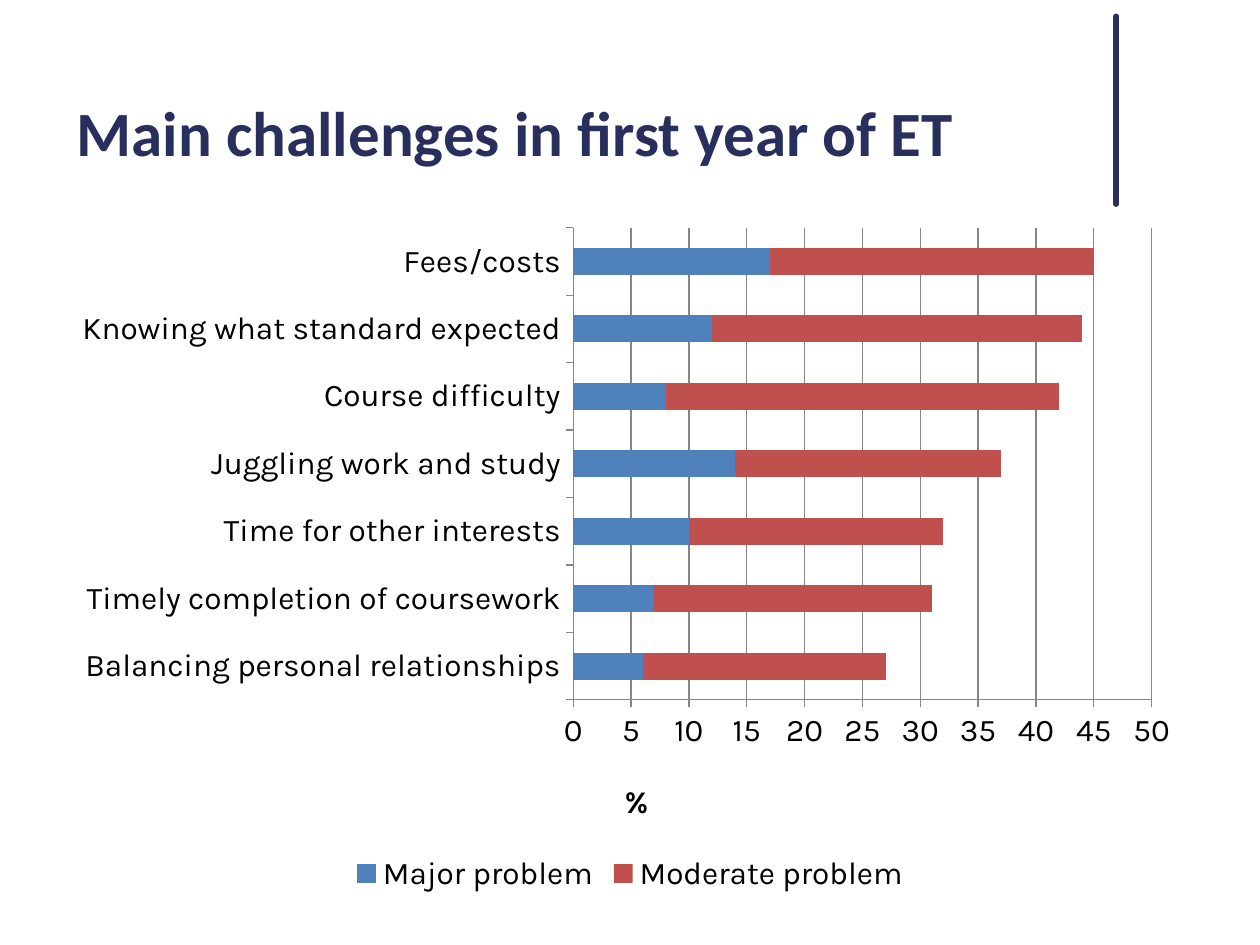
from dataclasses import dataclass

import lxml.etree
import pptx
import pptx.chart.data
import pptx.dml.color
import pptx.enum.chart
import pptx.enum.shapes
import pptx.enum.text
import pptx.oxml.ns
import pptx.util

PX = 9144  # EMU per px, 100 px to the inch
NAVY = pptx.dml.color.RGBColor(0x29, 0x2F, 0x5D)
BLUE = pptx.dml.color.RGBColor(0x4F, 0x81, 0xBD)
RED = pptx.dml.color.RGBColor(0xC0, 0x50, 0x4D)
BLACK = pptx.dml.color.RGBColor(0, 0, 0)
GREY = pptx.dml.color.RGBColor(0x86, 0x86, 0x86)

qn = pptx.oxml.ns.qn


@dataclass(frozen=True)
class Box:
    left: int
    top: int
    width: int
    height: int

    def emu(self) -> tuple[int, ...]:
        return tuple(n * PX for n in (self.left, self.top, self.width, self.height))


@dataclass(frozen=True)
class Series:
    name: str
    values: tuple[int, ...]
    color: pptx.dml.color.RGBColor


CATEGORIES = (
    "Balancing personal relationships",
    "Timely completion of coursework",
    "Time for other interests",
    "Juggling work and study",
    "Course difficulty",
    "Knowing what standard expected",
    "Fees/costs",
)
SERIES = (
    Series("Major problem", (6, 7, 10, 14, 8, 12, 17), BLUE),
    Series("Moderate problem", (21, 24, 22, 23, 34, 32, 28), RED),
)


def set_layout(parent, index: int, **settings) -> None:
    """Place a chart part by fractions of the chart area."""
    for old in parent.findall(qn("c:layout")):
        parent.remove(old)
    layout = lxml.etree.Element(qn("c:layout"))
    manual = lxml.etree.SubElement(layout, qn("c:manualLayout"))
    for tag, value in settings.items():
        lxml.etree.SubElement(manual, qn(f"c:{tag}")).set("val", str(value))
    parent.insert(index, layout)


def add_title(slide, text: str, box: Box) -> None:
    sp = slide.shapes.title
    sp.left, sp.top, sp.width, sp.height = box.emu()
    tf = sp.text_frame
    tf.text = text
    tf.vertical_anchor = pptx.enum.text.MSO_ANCHOR.BOTTOM
    p = tf.paragraphs[0]
    p.alignment = pptx.enum.text.PP_ALIGN.LEFT
    p.font.name, p.font.size, p.font.bold = "Calibri", pptx.util.Pt(36), True
    p.font.color.rgb = NAVY


def add_rule(slide, x: int, top: int, bottom: int) -> None:
    line = slide.shapes.add_connector(
        pptx.enum.shapes.MSO_CONNECTOR.STRAIGHT, x * PX, top * PX, x * PX, bottom * PX)
    line.line.color.rgb = NAVY
    line.line.width = pptx.util.Pt(3.25)
    line.line._get_or_add_ln().set("cap", "rnd")
    lxml.etree.SubElement(line._element.spPr, qn("a:effectLst"))


def add_chart(slide, box: Box) -> None:
    data = pptx.chart.data.CategoryChartData()
    data.categories = CATEGORIES
    for s in SERIES:
        data.add_series(s.name, s.values)
    chart = slide.shapes.add_chart(
        pptx.enum.chart.XL_CHART_TYPE.BAR_STACKED, *box.emu(), data).chart
    chart.has_title = False
    chart.font.name, chart.font.size = "Karla", pptx.util.Pt(18)
    chart.font.color.rgb = BLACK

    # Bars
    plot = chart.plots[0]
    plot.gap_width, plot.overlap, plot.vary_by_categories = 150, 100, False
    for series, s in zip(plot.series, SERIES):
        series.format.fill.solid()
        series.format.fill.fore_color.rgb = s.color

    # Axes
    value_axis = chart.value_axis
    value_axis.minimum_scale, value_axis.maximum_scale = 0, 50
    value_axis.major_unit = 5
    value_axis.has_major_gridlines = True
    for part in (value_axis, chart.category_axis, value_axis.major_gridlines):
        part.format.line.color.rgb = GREY
        part.format.line.width = pptx.util.Pt(0.75)
    for axis in (value_axis, chart.category_axis):
        axis.major_tick_mark = pptx.enum.chart.XL_TICK_MARK.OUTSIDE
    title = value_axis.axis_title
    title.text_frame.text = "%"
    p = title.text_frame.paragraphs[0]
    p.font.name, p.font.size, p.font.bold = "Karla", pptx.util.Pt(18), True
    p.font.color.rgb = BLACK

    # Legend and placing
    chart.has_legend = True
    chart.legend.position = pptx.enum.chart.XL_LEGEND_POSITION.BOTTOM
    chart.legend.include_in_layout = False
    set_layout(title._element, 1, xMode="edge", yMode="edge", x=0.49, y=0.82)
    set_layout(chart._chartSpace.chart.plotArea, 0, layoutTarget="inner",
               xMode="edge", yMode="edge", x=0.45, y=0.02, w=0.51, h=0.69)


def main() -> None:
    prs = pptx.Presentation()
    prs.slide_width, prs.slide_height = 1000 * PX, 750 * PX
    slide = prs.slides.add_slide(prs.slide_layouts[5])
    add_rule(slide, 886, 13, 162)
    add_title(slide, "Main challenges in first year of ET", Box(51, 44, 825, 95))
    add_chart(slide, Box(50, 170, 900, 543))
    prs.save("out.pptx")


if __name__ == "__main__":
    main()
